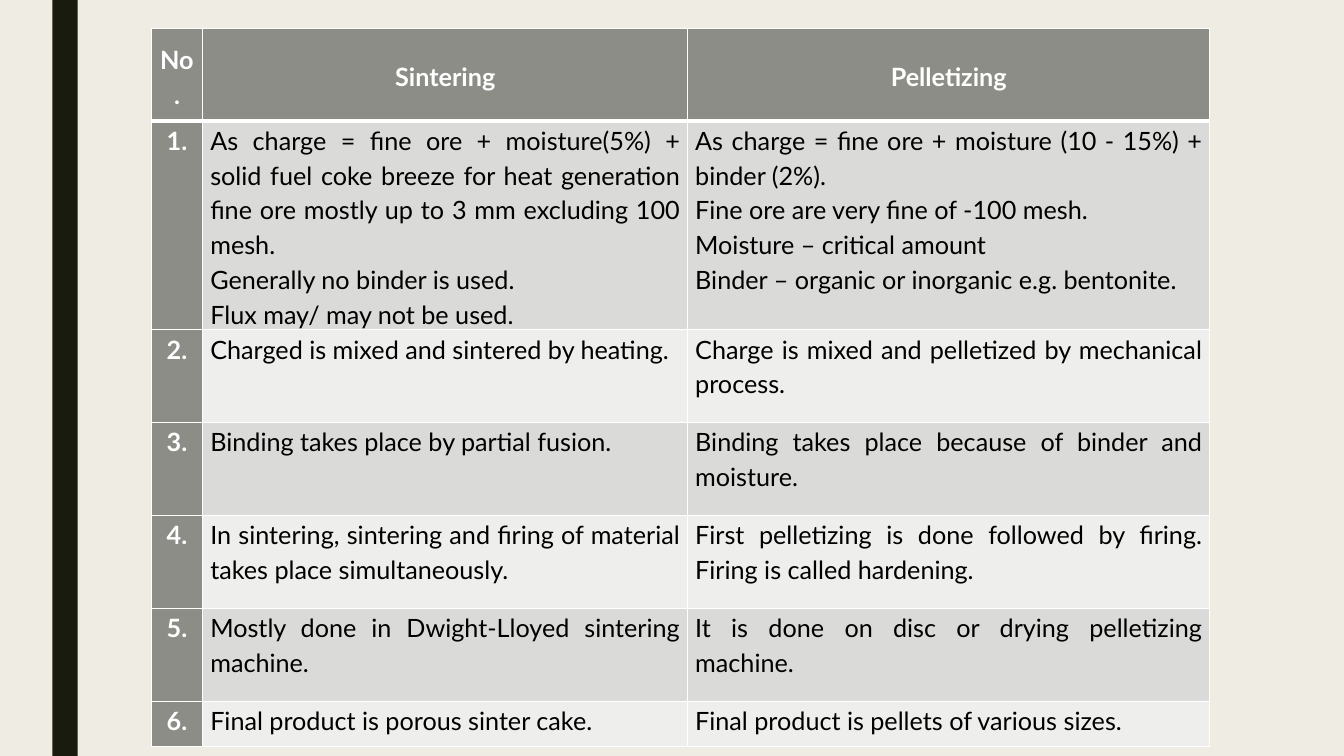
import pptx
import pptx.util
import pptx.dml.color
import pptx.enum.shapes
import pptx.enum.text
import pptx.oxml
import pptx.oxml.ns

Cm, Pt = pptx.util.Cm, pptx.util.Pt
ALIGN = pptx.enum.text.PP_ALIGN
ANCHOR = pptx.enum.text.MSO_ANCHOR

# Content
HEADINGS = ["No.", "Sintering", "Pelletizing"]
COMPARISONS = [
    (["As charge = fine ore + moisture(5%) + solid fuel coke breeze for heat "
      "generation fine ore mostly up to 3 mm excluding 100 mesh.",
      "Generally no binder is used.",
      "Flux may/ may not be used. "],
     ["As charge = fine ore + moisture (10 - 15%) + binder (2%).",
      "Fine ore are very fine of -100 mesh.",
      "Moisture – critical amount",
      "Binder – organic or inorganic e.g. bentonite."]),
    (["Charged is mixed and sintered by heating."],
     ["Charge is mixed and pelletized by mechanical process."]),
    (["Binding takes place by partial fusion."],
     ["Binding takes place because of binder and moisture."]),
    (["In sintering, sintering and firing of material takes place simultaneously."],
     ["First pelletizing is done followed by firing. Firing is called hardening."]),
    (["Mostly done in Dwight-Lloyed sintering machine."],
     ["It is done on disc or drying pelletizing machine."]),
    (["Final product is porous sinter cake."],
     ["Final product is pellets of various sizes."]),
]

# Look
FONT, SIZE, LINE_SPACING = "Lato", 18, 1.15
BACKGROUND, SIDE_BAR = "EFEDE3", "191B0E"
HEADING_FILL, BAND_FILLS = "8C8D86", ["DADBD9", "EEEEED"]
WHITE, BLACK = "FFFFFF", "000000"
COLUMN_WIDTHS = [1.3, 12.22, 13.16]
ROW_HEIGHTS = [2.34, 3.12, 2.34, 2.34, 2.34, 2.34, 1.14]
TABLE_LEFT, TABLE_TOP, TABLE_HEIGHT = 3.81, 0.71, 17.25


def paint(fill, colour):
    fill.solid()
    fill.fore_color.rgb = pptx.dml.color.RGBColor.from_string(colour)


def add_borders(cell, bottom_width):
    properties = cell._tc.get_or_add_tcPr()
    widths = {"lnL": 1, "lnR": 1, "lnT": 1, "lnB": bottom_width}
    for position, (side, width) in enumerate(widths.items()):
        border = pptx.oxml.parse_xml(
            f'<a:{side} {pptx.oxml.ns.nsdecls("a")} w="{Pt(width)}">'
            f'<a:solidFill><a:srgbClr val="{WHITE}"/></a:solidFill></a:{side}>')
        properties.insert(position, border)


def fill_cell(cell, lines, fill, is_label, is_heading):
    paint(cell.fill, fill)
    add_borders(cell, 3 if is_heading else 1)
    cell.margin_left = cell.margin_right = Cm(0.19)
    cell.margin_top = cell.margin_bottom = 0
    cell.vertical_anchor = ANCHOR.MIDDLE if is_heading else ANCHOR.TOP
    cell.text_frame.text = "\n".join(lines)
    for paragraph in cell.text_frame.paragraphs:
        paragraph.alignment = ALIGN.CENTER if is_label else ALIGN.JUSTIFY
        paragraph.line_spacing = LINE_SPACING
        for run in paragraph.runs:
            run.font.name, run.font.size = FONT, Pt(SIZE)
            run.font.bold = is_label
            paint(run.font.fill, WHITE if is_label else BLACK)


# Slide and side bar
deck = pptx.Presentation()
deck.slide_width, deck.slide_height = Cm(33.87), Cm(19.05)
slide = deck.slides.add_slide(deck.slide_layouts[6])
paint(slide.background.fill, BACKGROUND)
side_bar = slide.shapes.add_shape(
    pptx.enum.shapes.MSO_SHAPE.RECTANGLE, Cm(1.32), 0, Cm(0.64), deck.slide_height)
side_bar.shadow.inherit = False
paint(side_bar.fill, SIDE_BAR)
side_bar.line.fill.background()

# Comparison table
rows = [[[heading] for heading in HEADINGS]]
rows += [[[f"{number}."], sintering, pelletizing]
         for number, (sintering, pelletizing) in enumerate(COMPARISONS, 1)]
comparison = slide.shapes.add_table(
    len(rows), len(HEADINGS), Cm(TABLE_LEFT), Cm(TABLE_TOP),
    Cm(sum(COLUMN_WIDTHS)), Cm(TABLE_HEIGHT))
table = comparison.table
table.first_col = True
for column, width in zip(table.columns, COLUMN_WIDTHS):
    column.width = Cm(width)
for row, height in zip(table.rows, ROW_HEIGHTS):
    row.height = Cm(height)
comparison.height = Cm(TABLE_HEIGHT)

for row_index, row in enumerate(rows):
    for column_index, lines in enumerate(row):
        is_heading = row_index == 0
        is_label = is_heading or column_index == 0
        fill = HEADING_FILL if is_label else BAND_FILLS[(row_index - 1) % 2]
        fill_cell(table.cell(row_index, column_index), lines, fill, is_label, is_heading)

deck.save("out.pptx")
